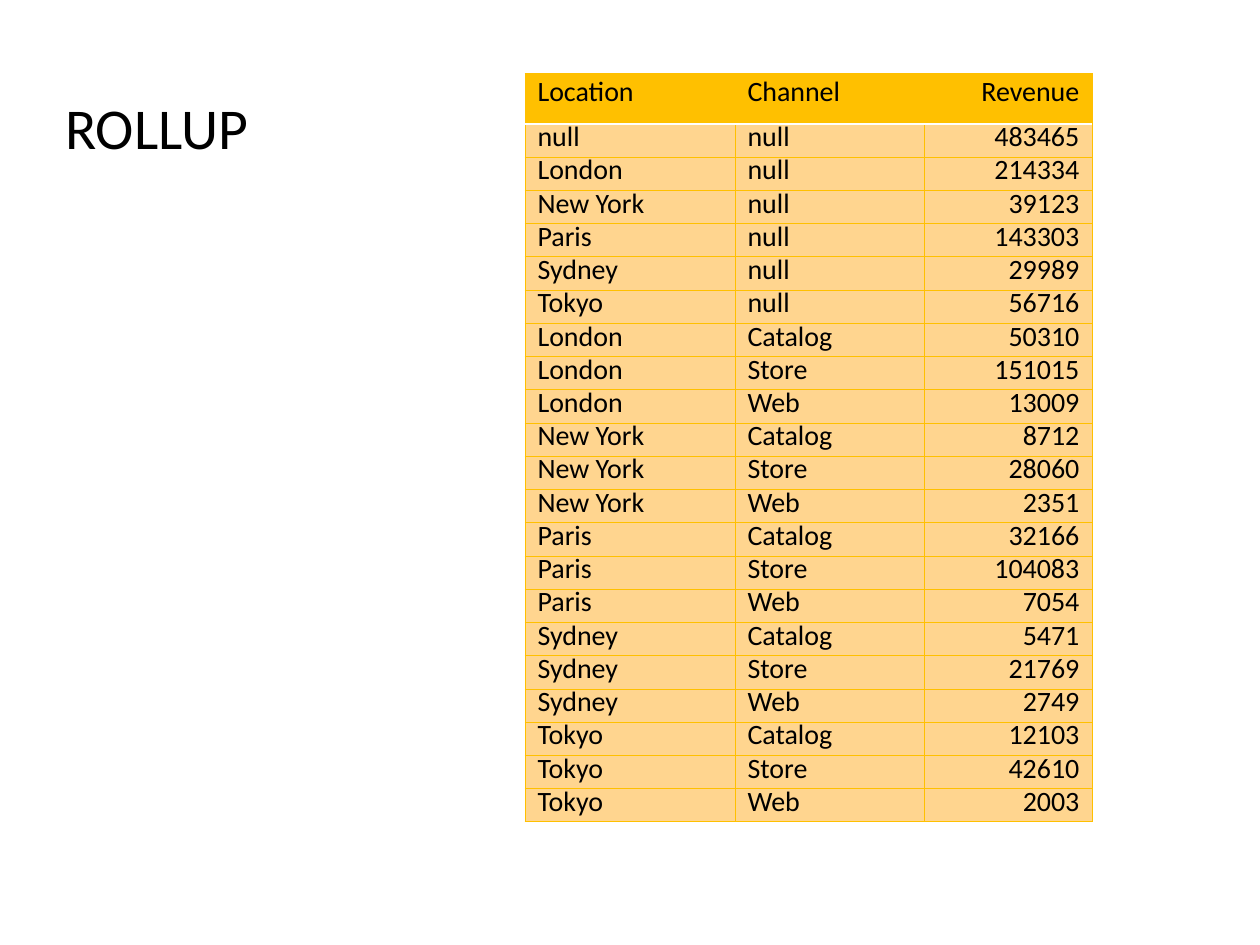
from pptx import Presentation
from pptx.dml.color import RGBColor as Rgb
from pptx.enum.text import MSO_ANCHOR as Anchor, PP_ALIGN as Align
from pptx.oxml import parse_xml
from pptx.oxml.ns import nsdecls
from pptx.util import Pt

COLORS = {"text": "000000", "gold": "FFC000", "sand": "FFD58F", "white": "FFFFFF"}

HEAD = ("Location", "Channel", "Revenue")
TOTALS = [
    ("null", 483465), ("London", 214334), ("New York", 39123),
    ("Paris", 143303), ("Sydney", 29989), ("Tokyo", 56716),
]
CHANNELS = ("Catalog", "Store", "Web")
SALES = {
    "London": (50310, 151015, 13009),
    "New York": (8712, 28060, 2351),
    "Paris": (32166, 104083, 7054),
    "Sydney": (5471, 21769, 2749),
    "Tokyo": (12103, 42610, 2003),
}


class Deck:
    font = "Calibri"

    def __init__(self, wide, high):
        self.prs = Presentation()
        self.prs.slide_width, self.prs.slide_height = Pt(wide), Pt(high)
        self.slide = self.prs.slides.add_slide(self.prs.slide_layouts[5])

    def style(self, para, size, space, align=Align.LEFT):
        para.alignment, para.line_spacing = align, space
        para.space_before = Pt(0)
        font = para.font
        font.name, font.size, font.bold = self.font, Pt(size), False
        font.color.rgb = Rgb.from_string(COLORS["text"])

    def title(self, text, left, top, wide, high):
        box = self.slide.shapes.title
        box.left, box.top, box.width, box.height = map(Pt, (left, top, wide, high))
        frame = box.text_frame
        frame.text = text
        frame.vertical_anchor = Anchor.MIDDLE
        self.style(frame.paragraphs[0], 33, 0.9)

    def edge(self, cell, side, color, width):
        return parse_xml(
            f'<a:ln{side} {nsdecls("a")} w="{Pt(width)}"><a:solidFill>'
            f'<a:srgbClr val="{COLORS[color]}"/></a:solidFill></a:ln{side}>')

    def cell(self, cell, text, fill, space, align, white):
        cell.text = str(text)
        self.style(cell.text_frame.paragraphs[0], 16, space, align)
        cell.fill.solid()
        cell.fill.fore_color.rgb = Rgb.from_string(COLORS[fill])
        # Borders come before the fill in the cell properties
        props = cell._tc.get_or_add_tcPr()
        for i, side in enumerate("LRTB"):
            look = ("white", 1) if side == white else ("gold", 0.5)
            props.insert(i, self.edge(cell, side, *look))

    def table(self, rows, left, top, widths, head, step):
        high = head + step * (len(rows) - 1)
        grid = self.slide.shapes.add_table(
            len(rows), len(widths), Pt(left), Pt(top), Pt(sum(widths)), Pt(high)).table
        grid.first_row = grid.horz_banding = False
        for col, wide in zip(grid.columns, widths):
            col.width = Pt(wide)
        for r, row in enumerate(rows):
            grid.rows[r].height = Pt(step if r else head)
            fill, space = ("sand", 0.6) if r else ("gold", 0.8)
            # A white rule parts the header from the body
            white = {0: "B", 1: "T"}.get(r)
            for c, text in enumerate(row):
                align = Align.RIGHT if c == len(row) - 1 else Align.LEFT
                self.cell(grid.cell(r, c), text, fill, space, align, white)


def main():
    deck = Deck(720, 540)
    deck.title("ROLLUP", 30, 30, 222, 90)

    # Header, totals by location, then each location by channel
    rows = [HEAD]
    rows += [(place, "null", total) for place, total in TOTALS]
    rows += [(place, channel, sum_) for place, sums in SALES.items()
             for channel, sum_ in zip(CHANNELS, sums)]
    deck.table(rows, 300, 42, (120, 108, 96), 28.8, 19)

    deck.prs.save("out.pptx")


if __name__ == "__main__":
    main()
